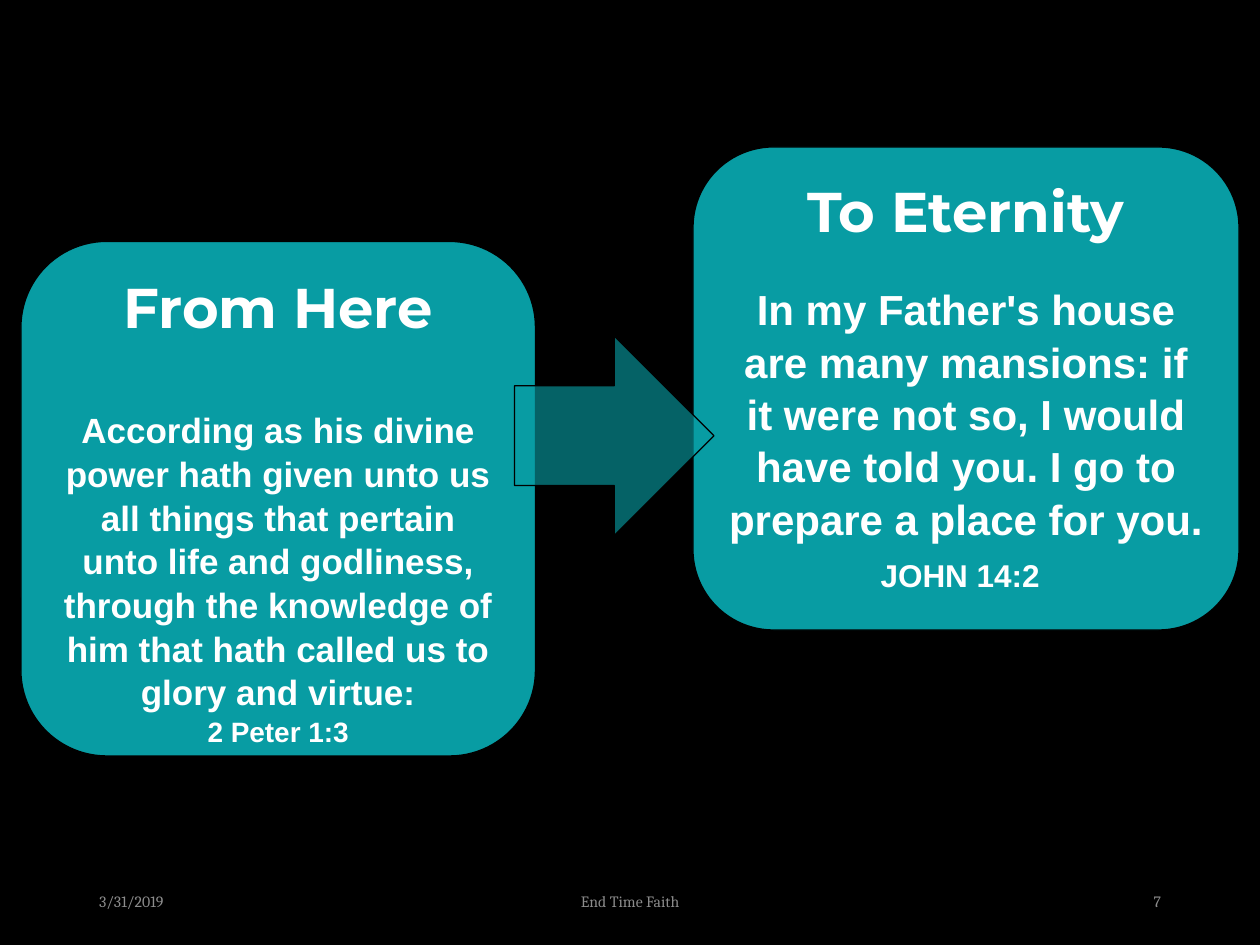
from dataclasses import dataclass

from lxml.etree import SubElement
from pptx import Presentation
from pptx.dml.color import RGBColor
from pptx.enum.shapes import MSO_SHAPE as Shape
from pptx.enum.text import MSO_ANCHOR as Anchor, PP_ALIGN as Align
from pptx.oxml.ns import qn
from pptx.util import Pt


@dataclass(frozen=True)
class Theme:
    black: RGBColor = RGBColor(0x00, 0x00, 0x00)
    teal: RGBColor = RGBColor(0x08, 0x9C, 0xA3)
    white: RGBColor = RGBColor(0xFF, 0xFF, 0xFF)
    grey: RGBColor = RGBColor(0x8C, 0x8C, 0x8C)
    heading_font: str = "Montserrat"
    verse_font: str = "Arial"
    footer_font: str = "Cambria"
    heading_size: int = 32
    footer_size: int = 9
    verse_spacing: float = 1.04
    arrow_opacity: int = 63


THEME = Theme()


def apply_format(target, values):
    for attribute, value in values.items():
        setattr(target, attribute, value)


def add_run(paragraph, text, size, font, color, bold=False):
    run = paragraph.add_run()
    run.text = text
    apply_format(run.font, {"size": Pt(size), "name": font, "bold": bold})
    run.font.color.rgb = color


def add_panel(slide, preset, box):
    """Teal preset shape with a thin black outline."""
    panel = slide.shapes.add_shape(preset, *map(Pt, box))
    panel.shadow.inherit = False
    panel.fill.solid()
    panel.fill.fore_color.rgb = THEME.teal
    panel.line.color.rgb = THEME.black
    panel.line.width = Pt(0.75)
    return panel


def add_verse_card(slide, box, heading, heading_gap, verse_lines):
    """Rounded card: a heading, then paragraphs of (text, size) runs."""
    frame = add_panel(slide, Shape.ROUNDED_RECTANGLE, box).text_frame
    apply_format(frame, {"word_wrap": True, "vertical_anchor": Anchor.TOP})

    title = frame.paragraphs[0]
    apply_format(title, {"alignment": Align.CENTER, "space_after": Pt(heading_gap)})
    add_run(title, heading, THEME.heading_size, THEME.heading_font, THEME.white, True)

    for runs in verse_lines:
        line = frame.add_paragraph()
        apply_format(line, {"alignment": Align.CENTER,
                            "line_spacing": THEME.verse_spacing})
        for text, size in runs:
            add_run(line, text, size, THEME.verse_font, THEME.white, True)


def add_arrow(slide, box):
    """Translucent arrow that links the two cards."""
    arrow = add_panel(slide, Shape.RIGHT_ARROW, box)
    fill_color = arrow.fill._xPr.find(qn("a:solidFill"))[0]
    SubElement(fill_color, qn("a:alpha"), val=str(THEME.arrow_opacity * 1000))


def add_footer(slide, left, width, text, alignment):
    footer = slide.shapes.add_textbox(Pt(left), Pt(500.5), Pt(width), Pt(28.75))
    frame = footer.text_frame
    apply_format(frame, {"word_wrap": True, "vertical_anchor": Anchor.MIDDLE})
    paragraph = frame.paragraphs[0]
    paragraph.alignment = alignment
    add_run(paragraph, text, THEME.footer_size, THEME.footer_font, THEME.grey)


def main():
    deck = Presentation()
    apply_format(deck, {"slide_width": Pt(720), "slide_height": Pt(540)})
    slide = deck.slides.add_slide(deck.slide_layouts[6])
    slide.background.fill.solid()
    slide.background.fill.fore_color.rgb = THEME.black

    # Cards and the arrow between them
    add_verse_card(slide, (12, 138, 294, 294), "From Here", 38.4, [
        [("According as his divine power hath given unto us all things that "
          "pertain unto life and godliness, through the knowledge of him that "
          "hath called us to glory and virtue:", 20)],
        [("2 Peter 1:3", 16)],
    ])
    add_verse_card(slide, (396, 84, 312, 276), "To Eternity", 21.6, [
        [("In my Father's house are many mansions: if it were not so, I would "
          "have told you. I go to prepare a place for you.", 24)],
        [("JOHN 14:2", 18), (" ", 24)],
    ])
    add_arrow(slide, (294, 192, 114, 114))

    # Footer row
    for left, width, text, alignment in (
        (49.5, 162, "3/31/2019", Align.LEFT),
        (238.5, 243, "End Time Faith", Align.CENTER),
        (508.5, 162, "7", Align.RIGHT),
    ):
        add_footer(slide, left, width, text, alignment)

    deck.save("out.pptx")


if __name__ == "__main__":
    main()
